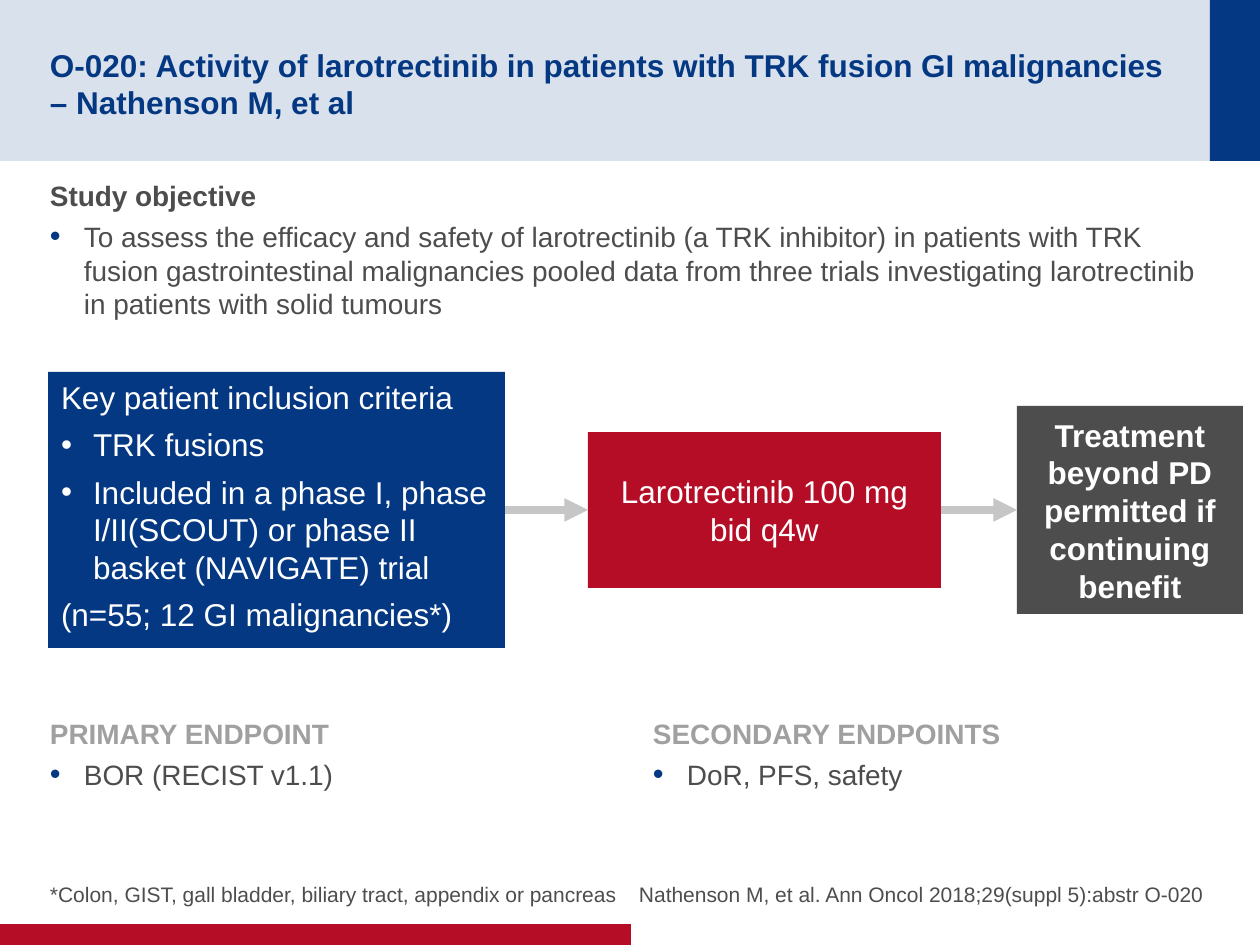
import pptx
import pptx.dml.color
import pptx.enum.shapes
import pptx.enum.text
import pptx.oxml.ns
import pptx.util
from lxml import etree

RGBColor = pptx.dml.color.RGBColor
Align = pptx.enum.text.PP_ALIGN
Anchor = pptx.enum.text.MSO_ANCHOR
qn = pptx.oxml.ns.qn

NAVY = RGBColor(0x04, 0x38, 0x82)
RED = RGBColor(0xB6, 0x0D, 0x27)
DARK = RGBColor(0x4D, 0x4D, 0x4D)
GREY = RGBColor(0xA0, 0xA0, 0xA0)
ARROW = RGBColor(0xC6, 0xC6, 0xC6)
WHITE = RGBColor(0xFF, 0xFF, 0xFF)

FONT = "Arial"
PX_PER_INCH = 126
RIGHT, LEFT = 3, 1  # connection sites of a rectangle


def px(length):
    return pptx.util.Emu(round(length * 914400 / PX_PER_INCH))


def add_rectangle(slide, box, color, opacity=100):
    shape = slide.shapes.add_shape(
        pptx.enum.shapes.MSO_SHAPE.RECTANGLE, *map(px, box))
    shape.shadow.inherit = False
    shape.line.fill.background()
    shape.fill.solid()
    shape.fill.fore_color.rgb = color
    if opacity < 100:
        color_element = shape.fill._xPr.find(qn("a:solidFill"))[0]
        etree.SubElement(color_element, qn("a:alpha"), val=str(opacity * 1000))
    return shape


def set_frame(shape, anchor=Anchor.TOP, side=0, top=0, bottom=0):
    frame = shape.text_frame
    frame.word_wrap = True
    frame.vertical_anchor = anchor
    frame.margin_left = frame.margin_right = px(side)
    frame.margin_top, frame.margin_bottom = px(top), px(bottom)
    return frame


def add_text_box(slide, box, **frame_options):
    shape = slide.shapes.add_textbox(*map(px, box))
    return set_frame(shape, **frame_options)


def set_bullet(paragraph, indent, color, percent):
    properties = paragraph._p.get_or_add_pPr()
    properties.set("marL", str(px(indent)))
    properties.set("indent", str(-px(indent)))
    bullet_color = etree.SubElement(properties, qn("a:buClr"))
    etree.SubElement(bullet_color, qn("a:srgbClr"), val=str(color))
    etree.SubElement(properties, qn("a:buSzPct"), val=str(percent * 1000))
    etree.SubElement(properties, qn("a:buFont"), typeface=FONT)
    etree.SubElement(properties, qn("a:buChar"), char="•")


def add_paragraph(frame, text, size, color, bold=False, align=Align.LEFT,
                  after=0, bullet=None):
    first = frame.paragraphs[0]
    paragraph = frame.add_paragraph() if first.runs else first
    paragraph.text = text
    paragraph.alignment = align
    paragraph.space_after = pptx.util.Pt(after)
    if bullet:
        set_bullet(paragraph, *bullet)
    font = paragraph.font
    font.name, font.size, font.bold = FONT, pptx.util.Pt(size), bold
    font.color.rgb = color


def add_section(slide, box, heading, heading_color, item, side=0):
    frame = add_text_box(slide, box, side=side, top=6, bottom=6)
    add_paragraph(frame, heading, 16, heading_color, bold=True, after=4)
    add_paragraph(frame, item, 16, DARK, after=4, bullet=(34, NAVY, 110))


def add_step(slide, box, color, text, bold=False):
    shape = add_rectangle(slide, box, color)
    frame = set_frame(shape, anchor=Anchor.MIDDLE, side=13)
    add_paragraph(frame, text, 18, WHITE, bold=bold, align=Align.CENTER)
    return shape


def add_criteria(slide, box):
    shape = add_rectangle(slide, box, NAVY)
    frame = set_frame(shape, side=13, top=6, bottom=6)
    bullet = (32, WHITE, 100)
    for text, mark in (
        ("Key patient inclusion criteria", None),
        ("TRK fusions", bullet),
        ("Included in a phase I, phase I/II(SCOUT) or phase II basket "
         "(NAVIGATE) trial", bullet),
        ("(n=55; 12 GI malignancies*)", None),
    ):
        add_paragraph(frame, text, 18, WHITE, after=5.4, bullet=mark)
    return shape


def add_arrow(slide, source, target):
    connector = slide.shapes.add_connector(
        pptx.enum.shapes.MSO_CONNECTOR.STRAIGHT, 0, 0, 0, 0)
    connector.begin_connect(source, RIGHT)
    connector.end_connect(target, LEFT)
    connector.line.color.rgb = ARROW
    connector.line.width = pptx.util.Pt(4.5)
    etree.SubElement(connector.line._get_or_add_ln(), qn("a:tailEnd"),
                     type="triangle")
    etree.SubElement(connector._element.spPr, qn("a:effectLst"))


def main():
    presentation = pptx.Presentation()
    presentation.slide_width, presentation.slide_height = px(1260), px(945)
    slide = presentation.slides.add_slide(presentation.slide_layouts[6])

    # Header and footer bands
    add_rectangle(slide, (0, 0, 1260, 161), NAVY, opacity=15)
    add_rectangle(slide, (1210, 0, 50, 161), NAVY)
    add_rectangle(slide, (0, 924, 631, 21), RED)

    # Title
    title = add_text_box(slide, (50, 25, 1160, 111), anchor=Anchor.MIDDLE, top=6)
    add_paragraph(title, "O-020: Activity of larotrectinib in patients with TRK "
                  "fusion GI malignancies\v– Nathenson M, et al",
                  18, NAVY, bold=True)

    # Objective and endpoints
    add_section(slide, (50, 173, 1160, 160), "Study objective", DARK,
                "To assess the efficacy and safety of larotrectinib (a TRK "
                "inhibitor) in patients with TRK fusion gastrointestinal "
                "malignancies pooled data from three trials investigating "
                "larotrectinib in patients with solid tumours")
    add_section(slide, (50, 711, 570, 135), "PRIMARY ENDPOINT", GREY,
                "BOR (RECIST v1.1)")
    add_section(slide, (640, 711, 570, 135), "SECONDARY ENDPOINTS", GREY,
                "DoR, PFS, safety", side=13)

    # Study flow
    criteria = add_criteria(slide, (48, 372, 457, 276))
    treatment = add_step(slide, (588, 432, 353, 156), RED,
                         "Larotrectinib 100 mg bid q4w")
    continuation = add_step(slide, (1017, 406, 226, 208), DARK,
                            "Treatment beyond PD permitted if continuing benefit",
                            bold=True)
    add_arrow(slide, criteria, treatment)
    add_arrow(slide, treatment, continuation)

    # Footnote and citation
    footnote = add_text_box(slide, (50, 840, 570, 67), anchor=Anchor.BOTTOM)
    add_paragraph(footnote, "*Colon, GIST, gall bladder, biliary tract, "
                  "appendix or pancreas", 12, DARK)
    citation = add_text_box(slide, (609, 840, 595, 67), anchor=Anchor.BOTTOM)
    add_paragraph(citation, "Nathenson M, et al. Ann Oncol 2018;29(suppl 5):"
                  "abstr O-020", 12, DARK, align=Align.RIGHT)

    presentation.save("out.pptx")


if __name__ == "__main__":
    main()
